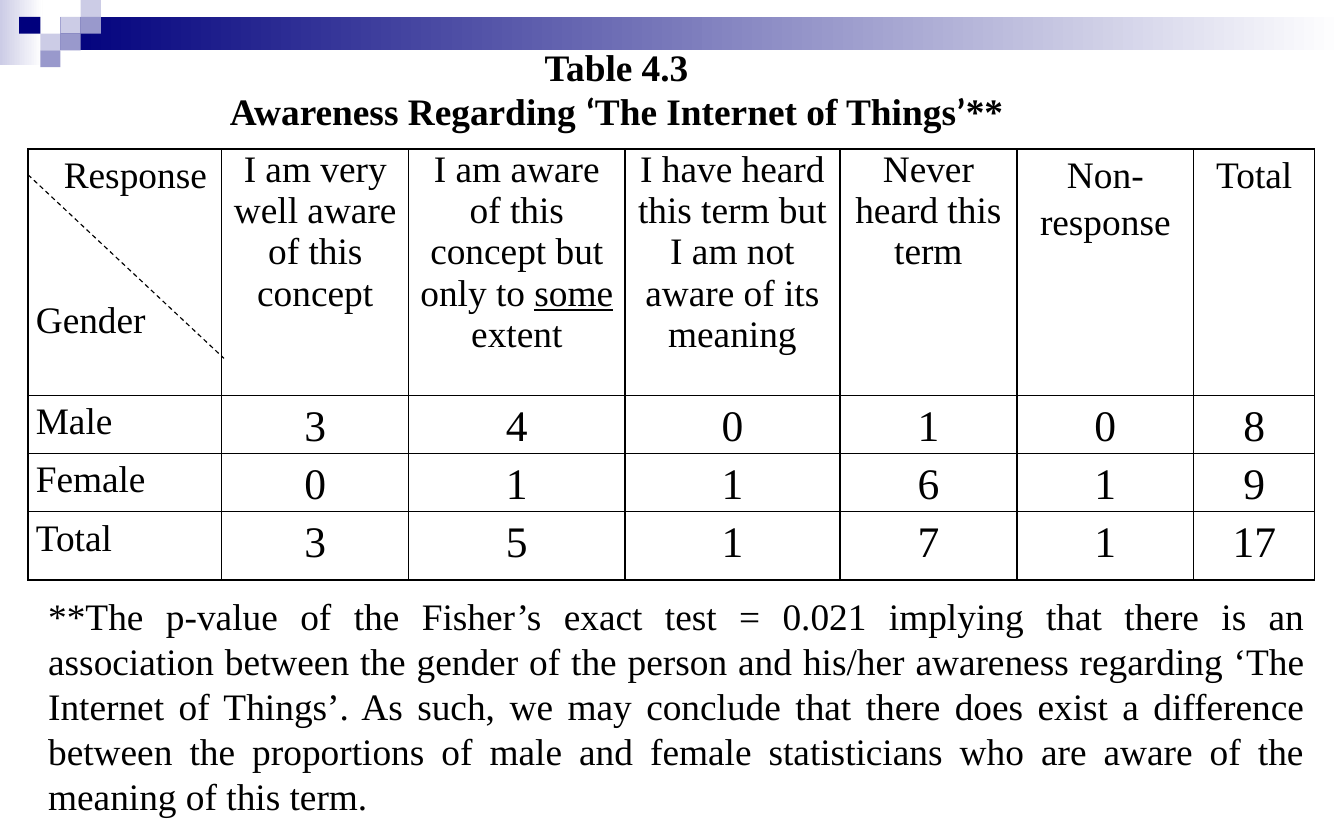
from dataclasses import dataclass

from lxml import etree
from pptx import Presentation
from pptx.dml.color import RGBColor
from pptx.enum import dml, shapes, text
from pptx.oxml import ns
from pptx.util import Inches, Pt


@dataclass(frozen=True)
class Theme:
    ink: str = "000000"
    navy: str = "00007D"
    mid: str = "9999CC"
    pale: str = "CCCCE6"
    white: str = "FFFFFF"
    face: str = "Times New Roman"
    quote: str = "Calibri"
    size: int = 24
    count: int = 28


T = Theme()
LEFT, MID, FULL = (text.PP_ALIGN.LEFT, text.PP_ALIGN.CENTER,
                   text.PP_ALIGN.JUSTIFY)

# Ribbon: left, top, width, height, colours (two make a gradient)
RIBBON = [
    (0, 0, 0.38, 0.58, T.pale, T.white),
    (0.54, 0.15, 11.46, 0.3, T.navy, T.white),
    (0.54, 0.15, 0.18, 0.15, T.pale),
    (0.72, 0, 0.18, 0.15, T.pale),
    (0.72, 0.15, 0.18, 0.15, T.mid),
    (0.36, 0.3, 0.18, 0.15, T.pale),
    (0.17, 0.15, 0.19, 0.15, T.navy),
    (0.54, 0.3, 0.18, 0.15, T.mid),
    (0.36, 0.45, 0.18, 0.15, T.mid),
]

TITLE = [
    [("Table 4.3", {})],
    [("Awareness Regarding ", {}), ("‘", {"name": T.quote}),
     ("The Internet of Things", {}), ("’", {"name": T.quote}), ("**", {})],
]
NOTE = (
    "**The p-value of the Fisher’s exact test = 0.021 implying that there "
    "is an association between the gender of the person and his/her "
    "awareness regarding ‘The Internet of Things’. As such, we may conclude "
    "that there does exist a difference between the proportions of male and "
    "female statisticians who are aware of the meaning of this term."
)

COLS = [1.73, 1.67, 1.93, 1.92, 1.58, 1.58, 1.08]
ROWS = [2.2, 0.52, 0.52, 0.61]
# Header cells: runs, line spacing
HEADS = [
    ([("I am very well aware of this concept", {})], 1.0),
    ([("I am aware of this concept but only to ", {}),
      ("some", {"underline": True}), (" extent", {})], 1.0),
    ([("I have heard this term but I am not aware of its meaning", {})], 1.0),
    ([("Never heard this term", {})], 1.0),
    ([("Non-response", {})], 1.15),
    ([("Total", {})], 1.15),
]
DATA = {
    "Male": [3, 4, 0, 1, 0, 8],
    "Female": [0, 1, 1, 6, 1, 9],
    "Total": [3, 5, 1, 7, 1, 17],
}


def put(obj, fmt):
    """Set each named attribute of obj."""
    for key, val in fmt.items():
        setattr(obj, key, val)


def box(left, top, wide, high):
    return [Inches(n) for n in (left, top, wide, high)]


def write(par, runs, align, font=None, **form):
    """Fill one paragraph with (words, format) runs."""
    put(par, {"alignment": align, "space_before": Pt(0), **form})
    base = {"name": T.face, "size": Pt(T.size), **(font or {})}
    for words, fmt in runs:
        run = par.add_run()
        run.text = words
        put(run.font, {**base, **fmt})
        run.font.color.rgb = RGBColor.from_string(T.ink)


def tile(group, left, top, wide, high, *hues):
    part = group.shapes.add_shape(shapes.MSO_SHAPE.RECTANGLE,
                                  *box(left, top, wide, high))
    part.shadow.inherit = False
    part.line.fill.background()
    if len(hues) == 1:
        part.fill.solid()
        part.fill.fore_color.rgb = RGBColor.from_string(hues[0])
        return
    part.fill.gradient()
    part.fill.gradient_angle = 0
    for pos, (stop, hue) in enumerate(zip(part.fill.gradient_stops, hues)):
        stop.position = pos
        stop.color.rgb = RGBColor.from_string(hue)


def place(slide, holder, area, **frame):
    """Move a placeholder to the front and set its frame."""
    put(holder, dict(zip(("left", "top", "width", "height"), box(*area))))
    put(holder.text_frame, {"word_wrap": True, "auto_size":
                            text.MSO_AUTO_SIZE.NONE,
                            "vertical_anchor": text.MSO_ANCHOR.TOP, **frame})
    slide.shapes._spTree.append(holder._element)
    return holder.text_frame


def indent(par, left):
    props = par._p.get_or_add_pPr()
    props.set("marL", str(Inches(left)))
    props.set("indent", "0")
    return props


def edge(cell):
    """Draw thin lines on all four sides of a cell."""
    props = cell._tc.get_or_add_tcPr()
    for side in ("lnL", "lnR", "lnT", "lnB"):
        line = etree.SubElement(props, ns.qn("a:" + side), w=str(Pt(1)))
        fill = etree.SubElement(line, ns.qn("a:solidFill"))
        etree.SubElement(fill, ns.qn("a:srgbClr"), val=T.ink)


def grid(slide):
    frame = slide.shapes.add_table(len(ROWS), len(COLS),
                                   *box(0.25, 1.33, sum(COLS), sum(ROWS)))
    table = frame.table
    put(table, {"first_row": False, "horz_banding": False})
    for col, wide in zip(table.columns, COLS):
        col.width = Inches(wide)
    for row, high in zip(table.rows, ROWS):
        row.height = Inches(high)
    for cell in table.iter_cells():
        put(cell, {"margin_left": Inches(0.07), "margin_right": Inches(0.07),
                   "margin_top": 0, "margin_bottom": 0})
        edge(cell)
        cell.fill.background()

    # Split corner cell
    corner = table.cell(0, 0).text_frame
    first = corner.paragraphs[0]
    write(first, [("Response", {})], LEFT, line_spacing=1.15)
    indent(first, 0.25)
    write(corner.add_paragraph(), [("Gender", {})], LEFT,
          line_spacing=1.15, space_before=Pt(63))

    # Header row
    for col, (runs, gap) in enumerate(HEADS, 1):
        write(table.cell(0, col).text_frame.paragraphs[0], runs, MID,
              line_spacing=gap)

    # Counts
    for row, (name, counts) in enumerate(DATA.items(), 1):
        write(table.cell(row, 0).text_frame.paragraphs[0], [(name, {})],
              FULL, line_spacing=1.15)
        for col, num in enumerate(counts, 1):
            write(table.cell(row, col).text_frame.paragraphs[0],
                  [(str(num), {})], MID, {"size": Pt(T.count)},
                  line_spacing=1.15)


def slash(slide):
    """Dashed diagonal across the corner cell."""
    line = slide.shapes.add_connector(shapes.MSO_CONNECTOR.STRAIGHT,
                                      *box(0.25, 1.56, 2, 3.2))
    put(line.line, {"width": Pt(0.75), "dash_style": dml.MSO_LINE.DASH})
    line.line.color.rgb = RGBColor.from_string(T.ink)
    etree.SubElement(line._element.spPr, ns.qn("a:effectLst"))


def main():
    deck = Presentation()
    put(deck, {"slide_width": Inches(12), "slide_height": Inches(7.5)})
    slide = deck.slides.add_slide(deck.slide_layouts[1])
    title, body = slide.placeholders

    # Ribbon
    group = slide.shapes.add_group_shape()
    for part in RIBBON:
        tile(group, *part)

    # Table
    grid(slide)

    # Title
    frame = place(slide, title, (1.67, 0.32, 7.67, 1.51),
                  margin_top=Inches(0.07))
    for num, runs in enumerate(TITLE):
        par = frame.add_paragraph() if num else frame.paragraphs[0]
        write(par, runs, MID, {"bold": True})

    slash(slide)

    # Note
    par = place(slide, body, (0.33, 5.25, 11.42, 2.52)).paragraphs[0]
    write(par, [(NOTE, {})], FULL)
    etree.SubElement(indent(par, 0), ns.qn("a:buNone"))

    deck.save("out.pptx")


if __name__ == "__main__":
    main()
